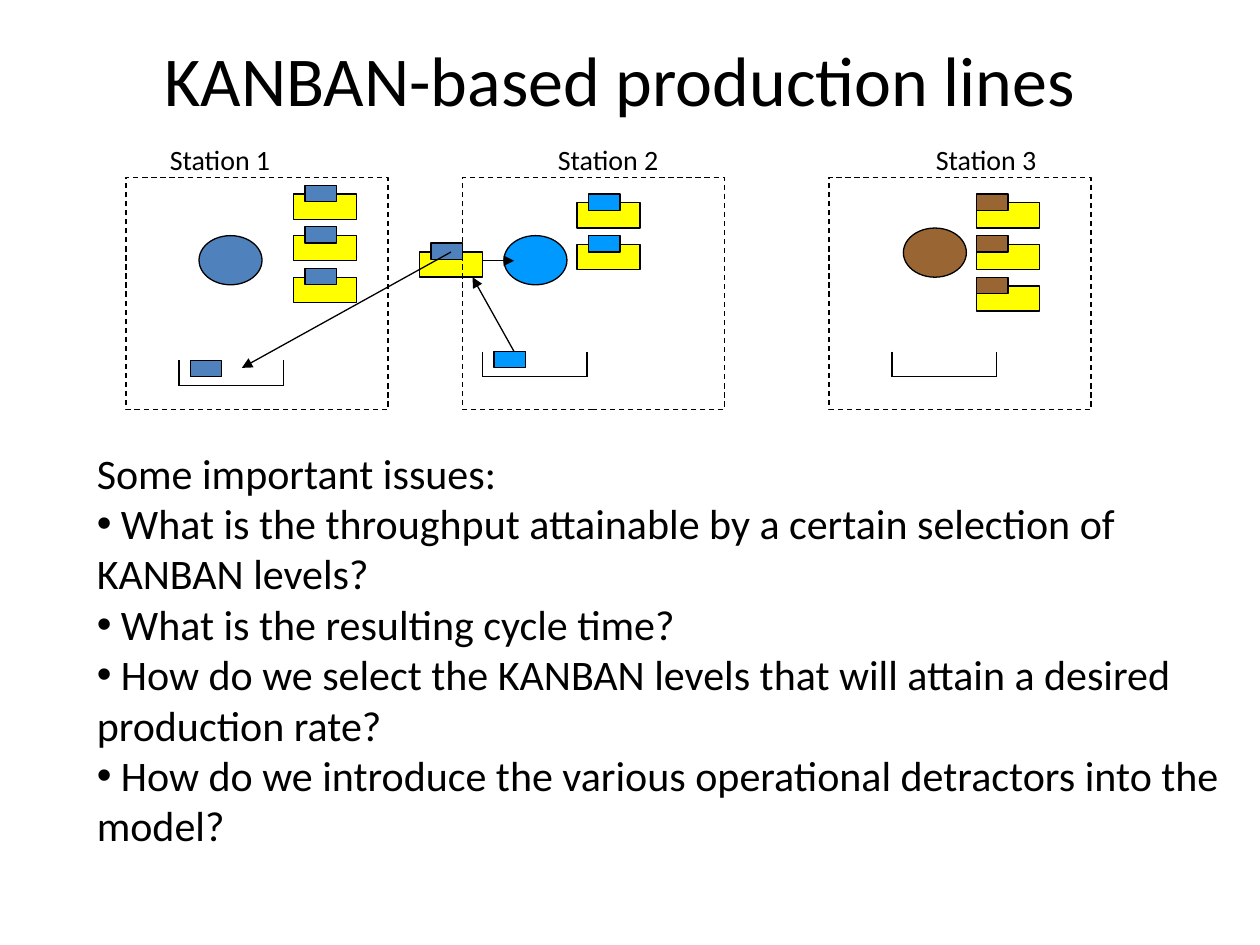
from dataclasses import dataclass

from lxml import etree
from pptx import Presentation
from pptx.dml.color import RGBColor
from pptx.enum.dml import MSO_LINE
from pptx.enum.shapes import MSO_CONNECTOR, MSO_SHAPE
from pptx.enum.text import MSO_ANCHOR, MSO_AUTO_SIZE, PP_ALIGN
from pptx.oxml.ns import qn
from pptx.util import Inches, Pt

RECT, OVAL = MSO_SHAPE.RECTANGLE, MSO_SHAPE.OVAL
STRAIGHT = MSO_CONNECTOR.STRAIGHT
DASH = MSO_LINE.DASH
MIDDLE, TOP = MSO_ANCHOR.MIDDLE, MSO_ANCHOR.TOP
CENTER, LEFT = PP_ALIGN.CENTER, PP_ALIGN.LEFT
FIT, NO_FIT = MSO_AUTO_SIZE.SHAPE_TO_FIT_TEXT, MSO_AUTO_SIZE.NONE


@dataclass(frozen=True)
class Theme:
    font: str = "Calibri"
    ink: str = "000000"
    pallet: str = "FFFF00"
    blue: str = "4F81BD"
    cyan: str = "0099FF"
    brown: str = "996633"
    title: int = 40
    body: int = 24
    label: int = 16
    line: float = 0.75


@dataclass(frozen=True)
class Station:
    name: str
    color: str
    frame_x: float
    label_x: float
    machine: tuple
    pallets: tuple
    pallet_count: int
    card_dx: float
    bin: tuple
    waiting_card: bool


FRAME_TOP, FRAME_SIZE = 1.41, (2.08, 1.84)
LABEL_TOP, LABEL_SIZE = 1.08, (1, 0.37)
MACHINE_SIZE = (0.5, 0.39)
PALLET_SIZE, PALLET_PITCH = (0.5, 0.2), 0.33
CARD_SIZE, CARD_DX, CARD_RISE = (0.25, 0.13), 0.09, 0.07
BIN_WIDTH, BIN_DEPTH = 0.83, 0.2


class SlideBuilder:
    def __init__(self, slide, theme):
        self.slide = slide
        self.theme = theme

    def style_line(self, line, **extra):
        line.color.rgb = RGBColor.from_string(self.theme.ink)
        formats = {"width": Pt(self.theme.line), **extra}
        for key, value in formats.items():
            setattr(line, key, value)

    def shape(self, kind, position, size, fill=None, **line_format):
        shape = self.slide.shapes.add_shape(kind, *map(Inches, position + size))
        shape.shadow.inherit = False
        if fill:
            shape.fill.solid()
            shape.fill.fore_color.rgb = RGBColor.from_string(fill)
        else:
            shape.fill.background()
        self.style_line(shape.line, **line_format)

    def line(self, start, end, arrow=False):
        connector = self.slide.shapes.add_connector(STRAIGHT, *map(Inches, start + end))
        self.style_line(connector.line)
        properties = connector._element.spPr
        if arrow:
            etree.SubElement(properties.find(qn("a:ln")), qn("a:tailEnd"), type="triangle")
        etree.SubElement(properties, qn("a:effectLst"))

    def text(self, position, size, paragraphs, points, bullets_from=None,
             align=LEFT, **frame_format):
        frame = self.slide.shapes.add_textbox(*map(Inches, position + size)).text_frame
        formats = {"word_wrap": True, "auto_size": FIT, "vertical_anchor": TOP, **frame_format}
        for key, value in formats.items():
            setattr(frame, key, value)
        frame.text = "\n".join(paragraphs)
        for index, paragraph in enumerate(frame.paragraphs):
            paragraph.alignment = align
            font = paragraph.runs[0].font
            font.color.rgb = RGBColor.from_string(self.theme.ink)
            for key, value in {"name": self.theme.font, "size": Pt(points)}.items():
                setattr(font, key, value)
            if bullets_from is not None and index >= bullets_from:
                properties = paragraph._p.get_or_add_pPr()
                etree.SubElement(properties, qn("a:buFont"), typeface="Arial")
                etree.SubElement(properties, qn("a:buChar"), char="•")

    def card(self, position, color):
        self.shape(RECT, position, CARD_SIZE, color)

    def pallet(self, position, color, card_dx=CARD_DX):
        x, y = position
        self.shape(RECT, position, PALLET_SIZE, self.theme.pallet)
        self.card((x + card_dx, y - CARD_RISE), color)

    def bin(self, position):
        x, y = position
        right, bottom = x + BIN_WIDTH, y + BIN_DEPTH
        corners = [(x, y), (x, bottom), (right, bottom), (right, y)]
        for start, end in zip(corners, corners[1:]):
            self.line(start, end)

    def station(self, station):
        self.shape(OVAL, station.machine, MACHINE_SIZE, station.color)
        x, y = station.pallets
        for row in range(station.pallet_count):
            self.pallet((x, y + row * PALLET_PITCH), station.color, station.card_dx)
        self.bin(station.bin)
        if station.waiting_card:
            self.card((station.bin[0] + CARD_DX, station.bin[1]), station.color)

    def frame(self, station):
        self.text((station.label_x, LABEL_TOP), LABEL_SIZE, [station.name],
                  self.theme.label, word_wrap=False)
        self.shape(RECT, (station.frame_x, FRAME_TOP), FRAME_SIZE, dash_style=DASH)


def main():
    theme = Theme()
    presentation = Presentation()
    presentation.slide_width, presentation.slide_height = Inches(10), Inches(7.5)
    builder = SlideBuilder(presentation.slides.add_slide(presentation.slide_layouts[6]), theme)

    stations = [
        Station("Station 1", theme.blue, 1, 1.25, (1.58, 1.87), (2.33, 1.54), 3,
                CARD_DX, (1.42, 2.86), True),
        Station("Station 2", theme.cyan, 3.67, 4.33, (4, 1.87), (4.58, 1.61), 2,
                CARD_DX, (3.83, 2.79), True),
        Station("Station 3", theme.brown, 6.58, 7.33, (7.17, 1.81), (7.75, 1.61), 3,
                0, (7.08, 2.79), False),
    ]
    kanban_moves = [
        ((4.08, 2.79), (3.75, 2.2)),
        ((3.83, 2.07), (4.08, 2.07)),
        ((3.58, 2), (1.92, 2.92)),
    ]
    issues = [
        "Some important issues:",
        " What is the throughput attainable by a certain selection of KANBAN levels?",
        " What is the resulting cycle time?",
        " How do we select the KANBAN levels that will attain a desired production rate?",
        " How do we introduce the various operational detractors into the model?",
    ]

    builder.text((0.42, 0), (9, 1.25), ["KANBAN-based production lines"], theme.title,
                 align=CENTER, vertical_anchor=MIDDLE, auto_size=NO_FIT)
    for station in stations:
        builder.station(station)
    builder.pallet((3.33, 2), theme.blue)
    for start, end in kanban_moves:
        builder.line(start, end, arrow=True)
    for station in stations:
        builder.frame(station)
    builder.text((0.67, 3.5), (9.17, 3.3), issues, theme.body, bullets_from=1)

    presentation.save("out.pptx")


if __name__ == "__main__":
    main()
